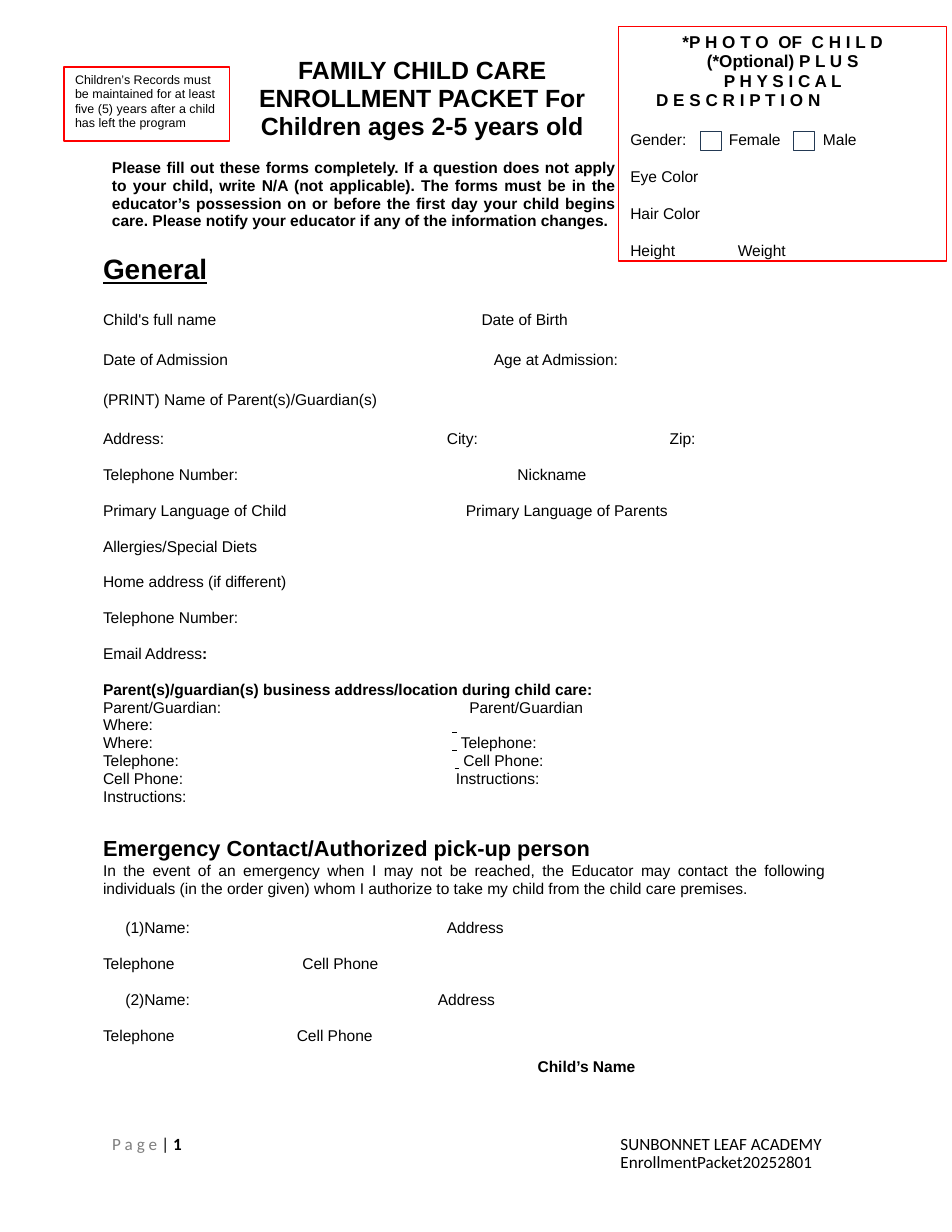
from dataclasses import dataclass

from lxml.etree import SubElement
from pptx import Presentation
from pptx.dml.color import RGBColor
from pptx.enum.shapes import MSO_SHAPE
from pptx.enum.text import MSO_ANCHOR, MSO_AUTO_SIZE, PP_ALIGN
from pptx.oxml.ns import qn
from pptx.util import Inches, Pt


@dataclass(frozen=True)
class Theme:
    font: str = "Arial"
    footer_font: str = "Calibri"
    ink: RGBColor = RGBColor(0, 0, 0)
    grey: RGBColor = RGBColor(0x7E, 0x7E, 0x7E)
    frame: RGBColor = RGBColor(0xFF, 0, 0)
    checkbox: RGBColor = RGBColor(0x23, 0x39, 0x53)
    title: float = 16
    heading: float = 18
    subheading: float = 14
    photo: float = 11
    text: float = 10
    note: float = 8
    footer: float = 11
    line: float = 11.5


THEME = Theme()
BLANK = (" ", "u")  # a short underlined field


def place(shape, box):
    shape.left, shape.top, shape.width, shape.height = map(Inches, box)
    return shape


def prepare(shape, top=0.0, side=0.0):
    """Set margins, wrapping and anchor, and return the text frame."""
    frame = shape.text_frame
    frame.word_wrap = True
    frame.auto_size = MSO_AUTO_SIZE.NONE
    frame.vertical_anchor = MSO_ANCHOR.TOP
    frame.margin_left = frame.margin_right = Inches(side)
    frame.margin_top, frame.margin_bottom = Inches(top), 0
    return frame


def text_box(slide, box, top=0.0):
    return prepare(slide.shapes.add_textbox(*map(Inches, box)), top)


def outlined_box(slide, box, color, width=0.75):
    shape = place(slide.shapes.add_shape(MSO_SHAPE.RECTANGLE, 0, 0, 0, 0), box)
    shape.shadow.inherit = False
    shape.fill.background()
    shape.line.color.rgb = color
    shape.line.width = Pt(width)
    return shape


def write(frame, parts, size=THEME.text, pitch=THEME.line, line=THEME.line, tabs=(),
          bold=False, align=PP_ALIGN.LEFT, left=0.01, number=None, font=THEME.font):
    """Add a paragraph whose baseline is `pitch` points under the last one.

    Parts are strings or (string, style) pairs, with b, u or g as style."""
    first = not frame.paragraphs[0].runs
    paragraph = frame.paragraphs[0] if first else frame.add_paragraph()
    paragraph.alignment = align
    paragraph.line_spacing = Pt(line)
    paragraph.space_before = Pt(0 if first else max(pitch - line, 0))
    paragraph.space_after = Pt(0)
    properties = paragraph._p.get_or_add_pPr()
    properties.set("marL", str(Inches(left)))
    if number:
        # An explicit zero indent on plain rows would cancel their tab stops.
        properties.set("indent", str(Inches(0.21)))
        SubElement(properties, qn("a:buAutoNum"), type="arabicParenBoth", startAt=str(number))
    if tabs:
        stops = SubElement(properties, qn("a:tabLst"))
        for tab in tabs:
            SubElement(stops, qn("a:tab"), pos=str(Inches(tab)), algn="l")
    paragraph.font.name = font
    paragraph.font.size = Pt(size)
    paragraph.font.bold = bold
    paragraph.font.color.rgb = THEME.ink
    for part in [parts] if isinstance(parts, str) else parts:
        words, style = (part, "") if isinstance(part, str) else part
        run = paragraph.add_run()
        run.text = words
        if "b" in style:
            run.font.bold = True
        if "u" in style:
            run.font.underline = True
        if "g" in style:
            run.font.color.rgb = THEME.grey


def add_heading(slide, box):
    frame = prepare(place(slide.shapes.title, box), 0.02)
    write(frame, "FAMILY CHILD CARE ENROLLMENT PACKET For Children ages 2-5 years old",
          THEME.title, line=18.2, bold=True, align=PP_ALIGN.CENTER)


def add_instructions(slide, box):
    write(text_box(slide, box, 0.02),
          "Please fill out these forms completely. If a question does not apply to your "
          "child, write N/A (not applicable). The forms must be in the educator’s possession "
          "on or before the first day your child begins care. Please notify your educator if "
          "any of the information changes.",
          line=11.4, bold=True, align=PP_ALIGN.JUSTIFY)


def add_records_note(slide, box):
    frame = prepare(outlined_box(slide, box, THEME.frame, 1), 0.05, 0.09)
    write(frame, "Children’s Records must be maintained for at least five (5) years after "
                 "a child has left the program", THEME.note, line=9.2)


def add_photo_box(slide, box):
    frame = prepare(outlined_box(slide, box, THEME.frame), 0.05, 0.1)
    for words in ("*P H O T O  OF  C H I L D", "(*Optional) P L U S", "P H Y S I C A L"):
        write(frame, words, THEME.photo, line=12.5, bold=True, align=PP_ALIGN.CENTER)
    write(frame, "D E S C R I P T I O N", THEME.photo, line=12.5, bold=True, left=0.24)
    write(frame, "Gender:\tFemale\tMale", pitch=25, tabs=(0.88, 1.72))
    for words in ("Eye Color", "Hair Color", "Height\tWeight"):
        write(frame, words, pitch=23.6, tabs=(0.96,))
    for offset in (0.73, 1.56):
        outlined_box(slide, (box[0] + offset, box[1] + 0.93, 0.19, 0.17), THEME.checkbox, 0.5)


def add_form(slide, box):
    left, top, width, height = box
    write(text_box(slide, (left, top, width, 0.22), 0.01), [("General", "u")],
          THEME.heading, line=13.6, bold=True)
    frame = text_box(slide, (left, top + 0.4, width, height - 0.4), 0.02)

    child_rows = [
        (11.5, "Child's full name\tDate of Birth", (3.38,)),
        (25.7, "Date of Admission\tAge at Admission:", (3.49,)),
        (25.7, "(PRINT) Name of Parent(s)/Guardian(s)", ()),
        (25.5, "Address:\tCity:\tZip:", (3.07, 5.06)),
        (23, "Telephone Number:\tNickname", (3.7,)),
        (23, "Primary Language of Child\tPrimary Language of Parents", (3.24,)),
        (23, "Allergies/Special Diets", ()),
        (23, "Home address (if different)", ()),
        (23, "Telephone Number:", ()),
        (23, ["Email Address", (":", "b")], ()),
        (22.9, [("Parent(s)/guardian(s) business address/location during child care:", "b")], ()),
    ]
    work_rows = [
        ("Parent/Guardian:\tParent/Guardian", 3.27),
        (["Where:\t", BLANK], 3.12),
        (["Where:\t", BLANK, " Telephone:"], 3.12),
        (["Telephone:\t", BLANK, " Cell Phone:"], 3.14),
        ("Cell Phone:\tInstructions:", 3.15),
        ("Instructions:", 3.15),
    ]
    for pitch, parts, tabs in child_rows:
        write(frame, parts, pitch=pitch, tabs=tabs)
    for parts, tab in work_rows:
        write(frame, parts, tabs=(tab,))

    write(frame, "Emergency Contact/Authorized pick-up person", THEME.subheading,
          pitch=35.5, bold=True)
    write(frame, "In the event of an emergency when I may not be reached, the Educator may "
                 "contact the following individuals (in the order given) whom I authorize to "
                 "take my child from the child care premises.",
          pitch=12.2, align=PP_ALIGN.JUSTIFY)
    contacts = [(25.2, 3.08, 1.78), (23, 3.0, 1.73)]
    for number, (pitch, address, cell) in enumerate(contacts, 1):
        write(frame, "Name:\tAddress", pitch=pitch, tabs=(address,), left=0, number=number)
        write(frame, "Telephone\tCell Phone", pitch=23, tabs=(cell,))
    write(frame, "Child’s Name", pitch=20.3, bold=True, left=3.89)


def add_footer(slide, box):
    left, top, width, height = box
    style = dict(size=THEME.footer, font=THEME.footer_font)
    write(text_box(slide, (left, top, 0.75, 0.18)), [("P a g e ", "g"), "| ", ("1", "b")], **style)
    write(text_box(slide, (left + width - 1.98, top, 1.98, height)),
          "SUNBONNET LEAF ACADEMY EnrollmentPacket20252801", **style)


def main():
    deck = Presentation()
    deck.slide_width, deck.slide_height = Inches(8.5), Inches(11)
    slide = deck.slides.add_slide(deck.slide_layouts[5])
    add_heading(slide, (2.3, 0.48, 2.93, 0.8))
    add_instructions(slide, (0.99, 1.4, 4.5, 0.67))
    add_form(slide, (0.91, 2.35, 6.45, 7.22))
    add_photo_box(slide, (5.52, 0.24, 2.93, 2.09))
    add_records_note(slide, (0.57, 0.6, 1.48, 0.66))
    add_footer(slide, (0.99, 10.14, 6.52, 0.34))
    deck.save("out.pptx")


if __name__ == "__main__":
    main()
